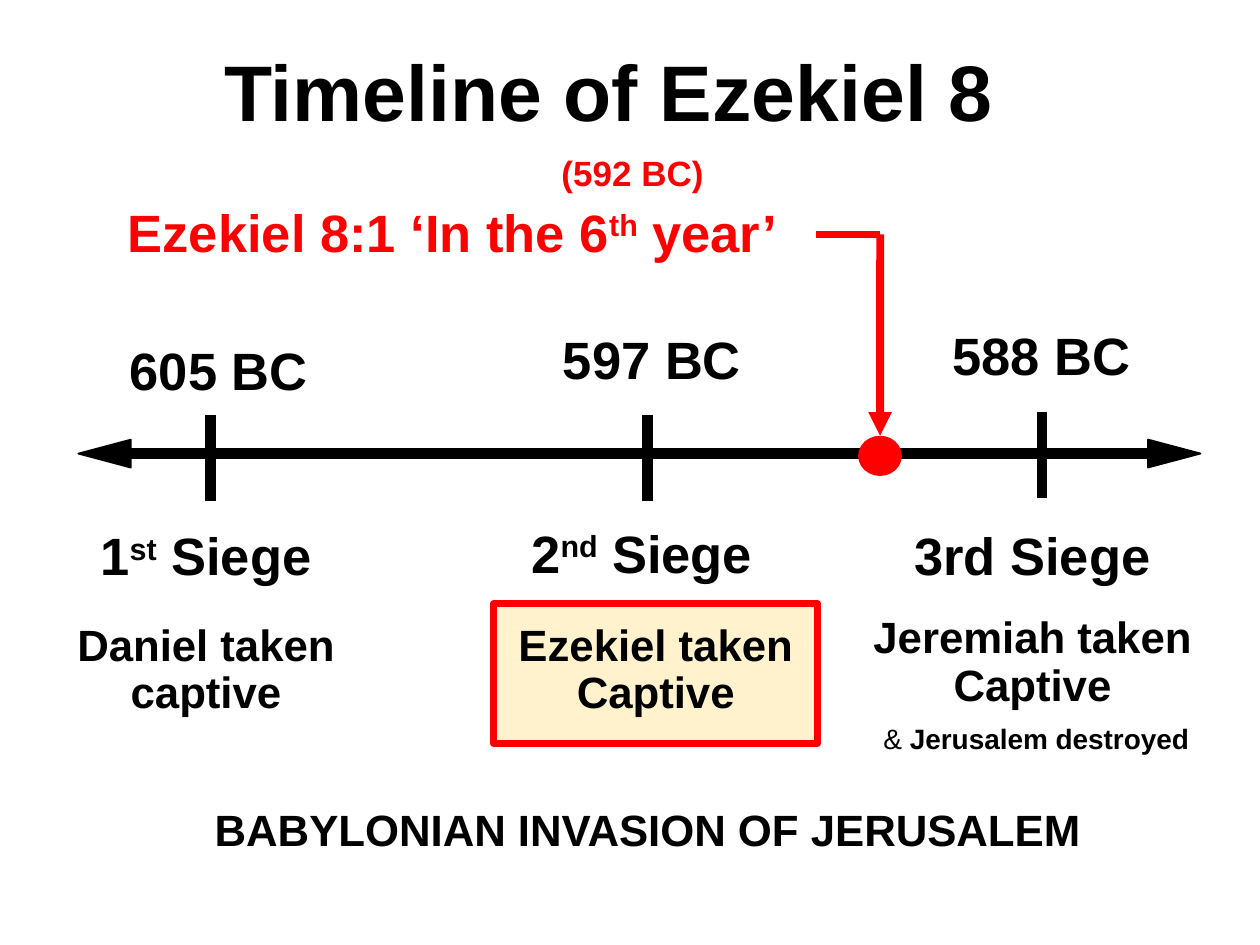
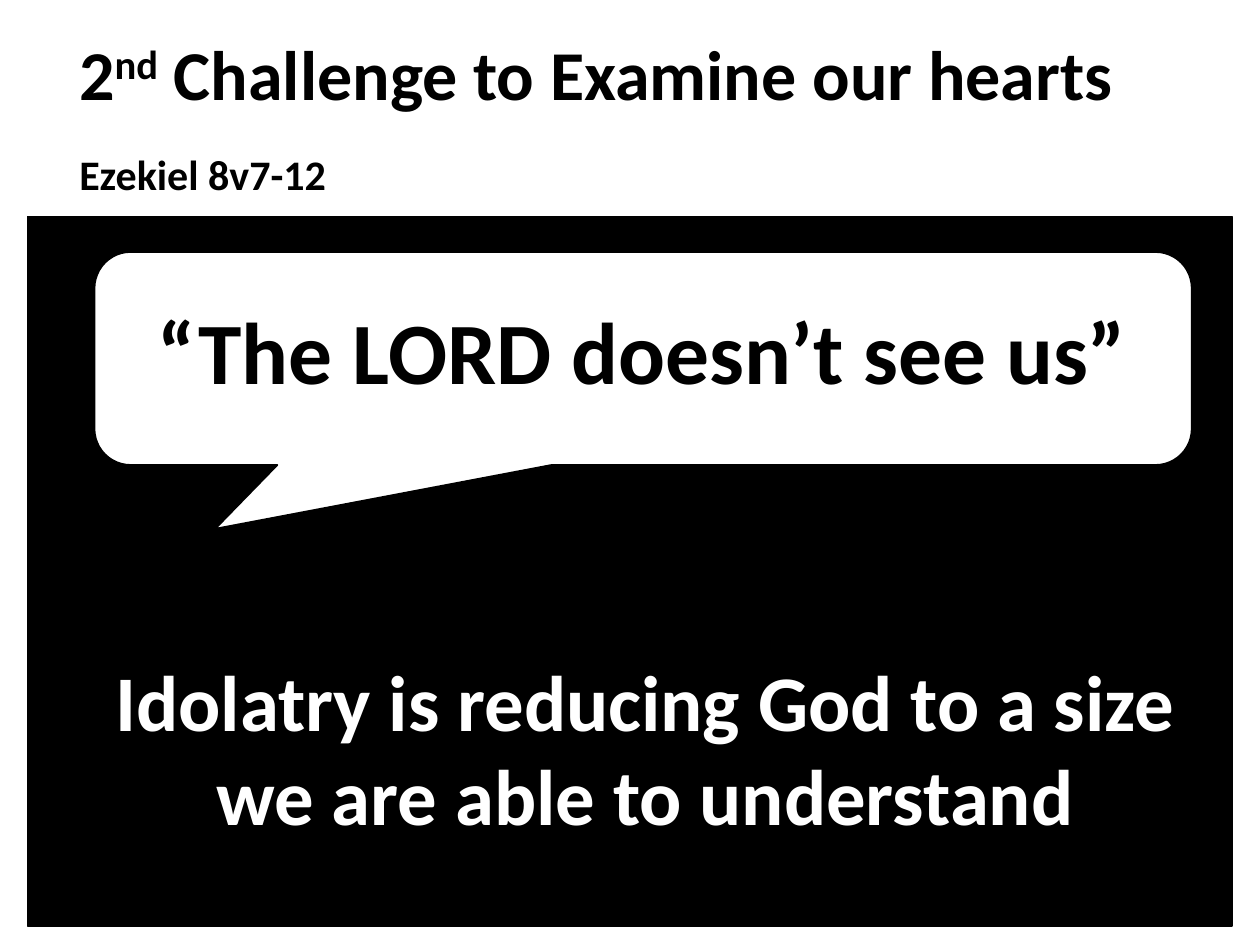
from lxml import etree
from pptx import Presentation
from pptx.dml.color import RGBColor
from pptx.enum import shapes, text
from pptx.oxml import ns
from pptx.util import Pt

BLACK = RGBColor(0, 0, 0)
WHITE = RGBColor(255, 255, 255)
RED = RGBColor(255, 0, 0)
CREAM = RGBColor(255, 242, 204)
KIND = shapes.MSO_SHAPE
LEFT, MID = text.PP_ALIGN.LEFT, text.PP_ALIGN.CENTER
TOP, BASE = text.MSO_ANCHOR.TOP, text.MSO_ANCHOR.BOTTOM


class Deck:
    """Draws styled elements on the current slide, with lengths in points."""

    def __init__(self):
        self.prs = Presentation()
        self.prs.slide_width, self.prs.slide_height = Pt(720), Pt(540)

    def page(self, font, inset, space):
        self.font, self.inset, self.space = font, inset, space
        self.slide = self.prs.slides.add_slide(self.prs.slide_layouts[6])
        fill = self.slide.background.fill
        fill.solid()
        fill.fore_color.rgb = WHITE

    def shape(self, kind, box, fill, line=None, width=1, turn=0):
        item = self.slide.shapes.add_shape(kind, *map(Pt, box))
        item.shadow.inherit = False
        item.rotation = turn
        item.fill.solid()
        item.fill.fore_color.rgb = fill
        if line is None:
            item.line.fill.background()
        else:
            item.line.color.rgb = line
            item.line.width = Pt(width)
        return item

    def line(self, start, end, hue=BLACK, width=6, head=False):
        item = self.slide.shapes.add_connector(
            shapes.MSO_CONNECTOR.STRAIGHT, *map(Pt, start + end))
        item.line.color.rgb = hue
        item.line.width = Pt(width)
        if head:
            ln = item._element.spPr.find(ns.qn("a:ln"))
            etree.SubElement(ln, ns.qn("a:tailEnd"), type="triangle")
        etree.SubElement(item._element.spPr, ns.qn("a:effectLst"))
        return item

    def text(self, box, *paras, **look):
        item = self.slide.shapes.add_textbox(*map(Pt, box))
        self.label(item, *paras, **look)

    def label(self, item, *paras, hue=BLACK, align=MID, anchor=TOP, drop=0):
        frame = item.text_frame
        frame.word_wrap = True
        frame.vertical_anchor = anchor
        side, rim = self.inset
        frame.margin_left = frame.margin_right = Pt(side)
        frame.margin_top, frame.margin_bottom = Pt(rim + drop), Pt(rim)
        for i, (size, gap, *runs) in enumerate(paras):
            para = frame.add_paragraph() if i else frame.paragraphs[0]
            para.alignment = align
            para.line_spacing = self.space
            para.space_before = Pt(gap)
            for words, style in runs:
                self.run(para, words, style, size, hue)

    def run(self, para, words, style, size, hue):
        run = para.add_run()
        run.text = words
        run.font.name, run.font.size = self.font, Pt(size)
        run.font.bold = style != "thin"
        run.font.color.rgb = hue
        if style == "sup":
            run.font._element.set("baseline", "30000")


def plain(size, words, gap=0):
    """Give a paragraph of one bold run."""
    return size, gap, (words, "")


def raised(size, stem, sup, rest):
    """Give a paragraph with a raised ordinal ending."""
    return size, 0, (stem, ""), (sup, "sup"), (rest, "")


def timeline(deck):
    """Draw the slide with the three sieges."""
    deck.page("Arial", (5, 3), 0.9)
    deck.text((26.5, 26, 655, 56), plain(45, "Timeline of Ezekiel 8 "), anchor=BASE)
    deck.text((293, 71.5, 137, 42.5), plain(20, "(592 BC)"), hue=RED, anchor=BASE)
    deck.text((68, 111, 384, 42.5), raised(30, "Ezekiel 8:1 ‘In the 6", "th", " year’"),
              hue=RED, align=LEFT, anchor=BASE)

    axis = 259.2
    deck.line((69, axis), (670, axis))
    for x, turn in ((59.8, 270), (671, 90)):
        deck.shape(KIND.ISOSCELES_TRIANGLE, (x - 8, axis - 15, 16, 30), BLACK, BLACK, turn=turn)
    dates = (("605 BC", 120.2, 237, 125, 176.5),
             ("597 BC", 370, 237, 372.6, 170.6),
             ("588 BC", 595.4, 235.4, 595, 168))
    for year, x, top, mid, y in dates:
        deck.line((x, top), (x, top + 49.2))
        deck.text((mid - 80, y, 160, 56), plain(30, year), anchor=BASE)

    dot = deck.shape(KIND.OVAL, (490.4, 249, 25, 23), RED)
    bend = (503, 134)
    deck.line((466.5, 134), bend, RED, 4.5)
    arrow = deck.line(bend, (503, 249), RED, 4.5, head=True)
    arrow.end_connect(dot, 0)

    deck.text((38.2, 300.2, 159, 155), raised(30, "1", "st", " Siege"),
              plain(25, "Daniel taken captive", 20.7))
    deck.text((274.3, 298.8, 185, 44), raised(30, "2", "nd", " Siege"))
    deck.text((486.7, 300.2, 206.6, 178.6), plain(30, "3rd Siege"),
              plain(25, "Jeremiah taken Captive", 16.5),
              (16, 8.3, (" & ", "thin"), ("Jerusalem destroyed", "")))
    frame = deck.shape(KIND.RECTANGLE, (282.2, 345, 185, 80), CREAM, RED, 4)
    deck.label(frame, plain(25, "Ezekiel taken Captive"), drop=8.3)
    deck.text((42.5, 448, 655, 44), plain(25, "BABYLONIAN INVASION OF JERUSALEM"), anchor=BASE)


def challenge(deck):
    """Draw the slide with the speech bubble."""
    deck.page("Calibri", (7.2, 3.6), 1)
    deck.shape(KIND.RECTANGLE, (15.8, 123.8, 688.3, 405.4), BLACK, BLACK)
    deck.text((38.2, 13.7, 655, 55.4), raised(40, "2", "nd", " Challenge to Examine our hearts"),
              align=LEFT)
    deck.text((38.2, 81.4, 166.3, 36), plain(24, "Ezekiel 8v7-12"), align=LEFT)
    bubble = deck.shape(KIND.ROUNDED_RECTANGULAR_CALLOUT, (54, 144, 627, 121.7), WHITE, BLACK)
    for i, value in enumerate((-0.39, 0.8, 0.17)):
        bubble.adjustments[i] = value
    deck.text((82.8, 166.3, 610, 67.7), plain(50, "“The LORD doesn’t see us”"), align=LEFT)
    deck.text((54, 369.4, 629.3, 120),
              plain(45, "Idolatry is reducing God to a size we are able to understand"), hue=WHITE)


def main():
    """Build and save both slides."""
    deck = Deck()
    timeline(deck)
    challenge(deck)
    deck.prs.save("out.pptx")


if __name__ == "__main__":
    main()
